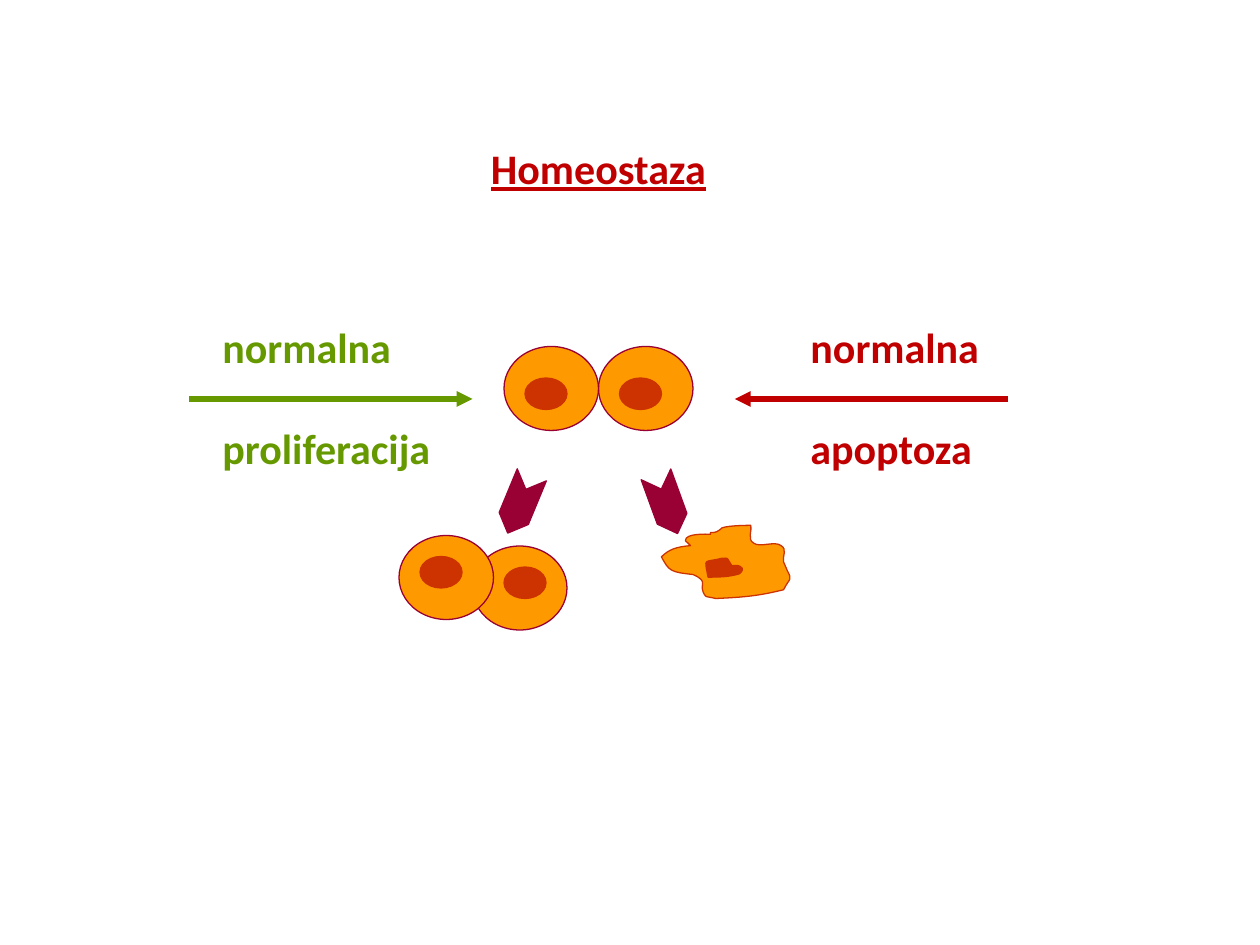
from dataclasses import dataclass
from itertools import chain

from lxml.etree import SubElement
from pptx import Presentation
from pptx.dml.color import RGBColor
from pptx.enum.shapes import MSO_CONNECTOR as Connector, MSO_SHAPE as Preset
from pptx.enum.text import MSO_AUTO_SIZE as AutoSize, PP_ALIGN as Align
from pptx.oxml.ns import qn
from pptx.util import Pt

GREEN, RED = "669900", "C00000"
ORANGE, RUST, PLUM = "FF9900", "CC3300", "990033"

Point = tuple[float, float]


@dataclass
class Label:
    lines: list[str]
    left: float
    top: float
    width: float
    height: float
    color: str
    align: Align | None = None
    underline: bool | None = None


@dataclass
class Arrow:
    start: float
    end: float
    y: float
    color: str


@dataclass
class Cell:
    left: float
    top: float
    nucleus_dx: float
    nucleus_dy: float


@dataclass
class Chevron:
    left: float
    top: float
    rotation: float


@dataclass
class Blob:
    start: Point
    curves: list[tuple[Point, Point, Point]]
    fill: str


LABELS = [
    Label(["normalna", "proliferacija"], 120, 180, 204, 94.3, GREEN),
    Label(["normalna", "apoptoza"], 456, 180, 156, 94.3, RED),
    Label(["Homeostaza"], 264, 78, 156, 36, RED, Align.CENTER, True),
]
ARROWS = [Arrow(108, 270, 228, GREEN), Arrow(576, 420, 228, RED)]
CELLS = [
    Cell(270, 312, 18, 12),
    Cell(228, 306, 12, 12),
    Cell(342, 198, 12, 18),
    Cell(288, 198, 12, 18),
]
CHEVRONS = [Chevron(279, 279, 112.5), Chevron(363, 279, 70)]
DYING_CELL = [
    Blob((406.1, 305.3), [
        ((403.9, 305.3), (391.7, 304.6), (391.7, 308.9)),
        ((391.7, 309.6), (393.8, 310.3), (394.6, 311.8)),
        ((386.6, 312.5), (382.3, 313.9), (378, 318.2)),
        ((382.3, 326.2), (383, 326.9), (396, 328.3)),
        ((406.1, 332.6), (398.2, 334.1), (403.2, 340.6)),
        ((403.9, 341.3), (406.8, 341.3), (409, 342)),
        ((424.8, 341.3), (433.4, 340.6), (447.8, 337)),
        ((451.4, 329.8), (452.9, 331.9), (450, 326.2)),
        ((449.3, 324.7), (447.8, 321.1), (447.8, 321.1)),
        ((447.1, 317.5), (450, 313.9), (446.4, 311.8)),
        ((442.8, 308.9), (434.2, 313.2), (430.6, 310.3)),
        ((427, 308.2), (429.8, 303.1), (429.1, 300.2)),
        ((428.4, 300.2), (416.2, 300.2), (412.6, 301.7)),
        ((411.8, 302.4), (411.1, 303.1), (409.7, 303.8)),
        ((405.4, 305.3), (406.1, 303.1), (406.1, 305.3)),
    ], ORANGE),
    Blob((412.6, 319), [
        ((401.8, 321.8), (402.5, 318.2), (404.6, 329.8)),
        ((409.7, 329.8), (415.4, 329.8), (421.2, 328.3)),
        ((422.6, 328.3), (424.8, 326.2), (424.1, 324.7)),
        ((422.6, 322.6), (420.5, 323.3), (418.3, 323.3)),
        ((414.7, 318.2), (416.9, 319), (412.6, 319)),
    ], RUST),
]


def rgb(color: str) -> RGBColor:
    return RGBColor.from_string(color)


def paint(shape, fill: str, line: str) -> None:
    shape.shadow.inherit = False
    shape.fill.solid()
    shape.fill.fore_color.rgb = rgb(fill)
    shape.line.color.rgb = rgb(line)
    shape.line.width = Pt(0.75)


def draw_label(shapes, label: Label) -> None:
    frame = shapes.add_textbox(
        Pt(label.left), Pt(label.top), Pt(label.width), Pt(label.height)).text_frame
    frame.word_wrap = True
    frame.auto_size = AutoSize.SHAPE_TO_FIT_TEXT
    for index, line in enumerate(label.lines):
        paragraph = frame.add_paragraph() if index else frame.paragraphs[0]
        paragraph.alignment = label.align
        paragraph.space_before = Pt(28.8 * index)
        run = paragraph.add_run()
        run.text = line
        run.font.name, run.font.size, run.font.bold = "Calibri", Pt(24), True
        run.font.underline = label.underline
        run.font.color.rgb = rgb(label.color)


def draw_arrow(shapes, arrow: Arrow) -> None:
    connector = shapes.add_connector(
        Connector.STRAIGHT, Pt(arrow.start), Pt(arrow.y), Pt(arrow.end), Pt(arrow.y))
    connector.line.color.rgb = rgb(arrow.color)
    connector.line.width = Pt(3)
    SubElement(connector.line._get_or_add_ln(), qn("a:tailEnd"), type="triangle")
    SubElement(connector._element.spPr, qn("a:effectLst"))


def draw_cell(shapes, cell: Cell) -> None:
    body = shapes.add_shape(Preset.OVAL, Pt(cell.left), Pt(cell.top), Pt(54), Pt(48))
    paint(body, ORANGE, PLUM)
    nucleus = shapes.add_shape(
        Preset.OVAL, Pt(cell.left + cell.nucleus_dx), Pt(cell.top + cell.nucleus_dy),
        Pt(24), Pt(18))
    paint(nucleus, RUST, RUST)


def draw_chevron(shapes, chevron: Chevron) -> None:
    pointer = shapes.add_shape(
        Preset.CHEVRON, Pt(chevron.left), Pt(chevron.top), Pt(36), Pt(18))
    pointer.rotation = chevron.rotation
    paint(pointer, PLUM, PLUM)


def draw_blob(shapes, blob: Blob) -> None:
    builder = shapes.build_freeform(Pt(blob.start[0]), Pt(blob.start[1]))
    builder.add_line_segments(
        [(Pt(x), Pt(y)) for x, y in chain.from_iterable(blob.curves)], close=True)
    shape = builder.convert_to_shape()
    segments = list(shape._element.iter(qn("a:lnTo")))
    for first, second, third in zip(segments[::3], segments[1::3], segments[2::3]):
        first.tag = qn("a:cubicBezTo")
        for control in (second, third):
            first.append(control[0])
            control.getparent().remove(control)
    paint(shape, blob.fill, RUST)


def main() -> None:
    """Build the homeostasis slide: proliferation balanced by apoptosis."""
    deck = Presentation()
    deck.slide_width, deck.slide_height = Pt(720), Pt(540)
    shapes = deck.slides.add_slide(deck.slide_layouts[6]).shapes
    for draw, items in (
        (draw_arrow, ARROWS),
        (draw_label, LABELS),
        (draw_cell, CELLS),
        (draw_chevron, CHEVRONS),
        (draw_blob, DYING_CELL),
    ):
        for item in items:
            draw(shapes, item)
    deck.save("out.pptx")


if __name__ == "__main__":
    main()
